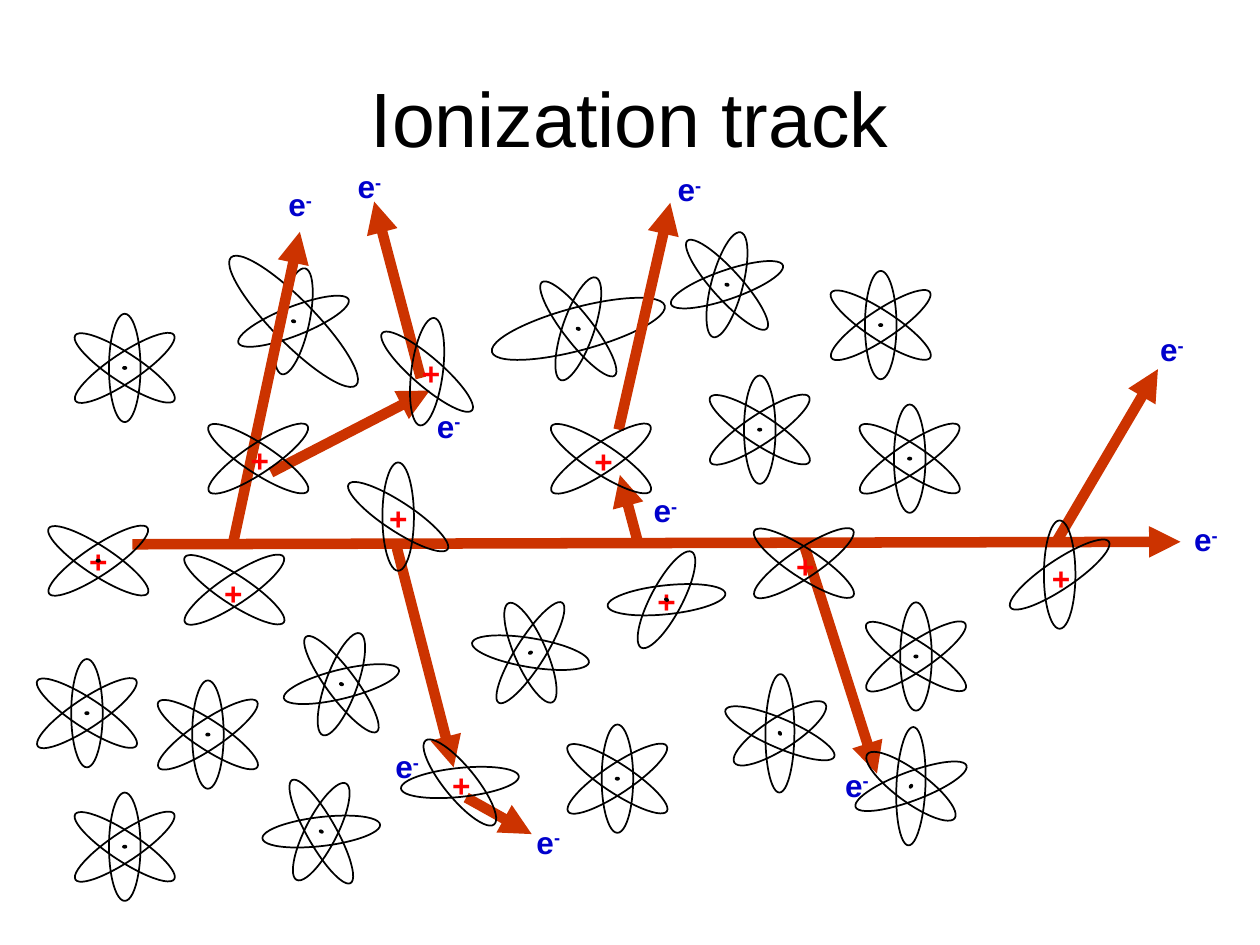
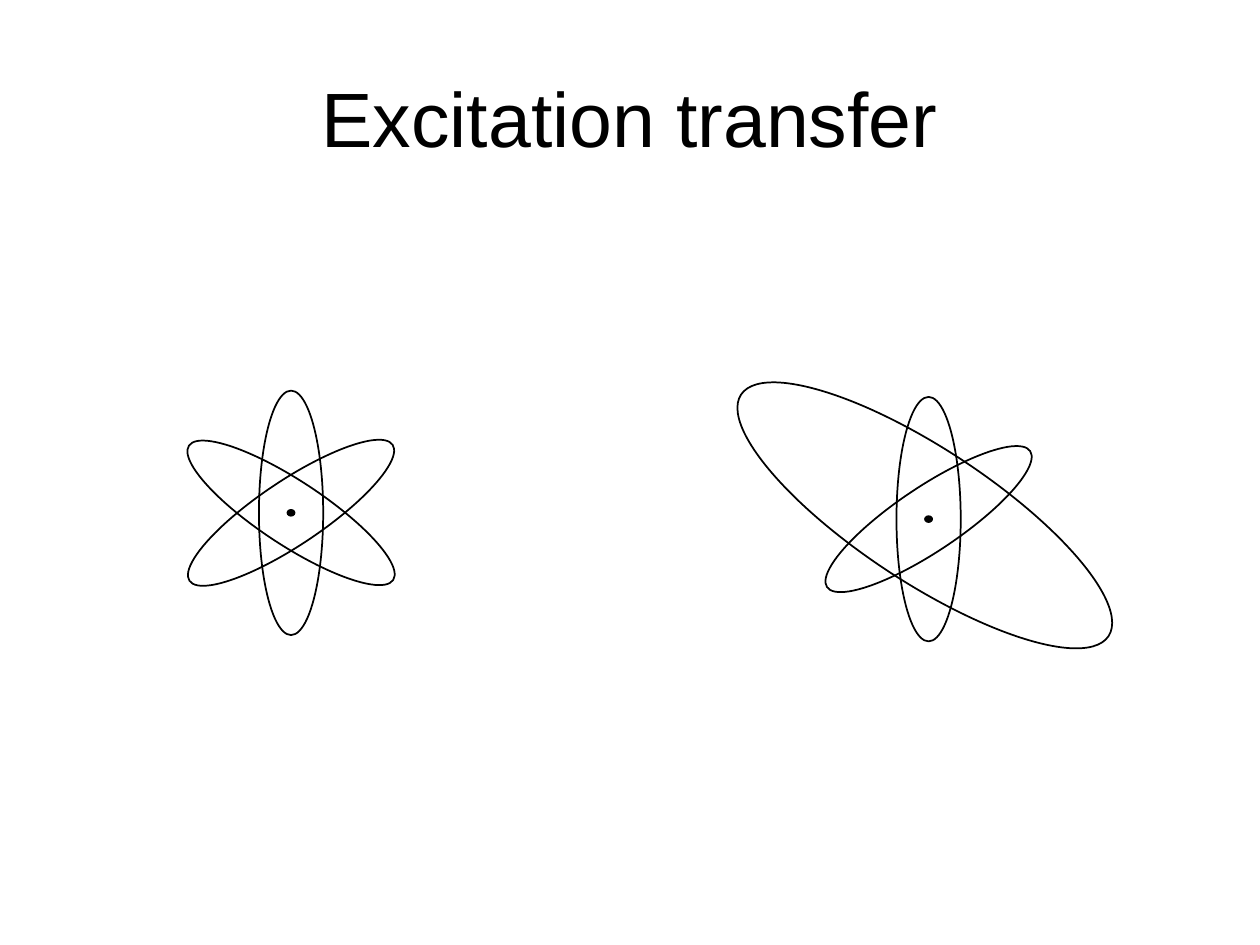
import pptx
import pptx.util
import pptx.dml.color
import pptx.enum.shapes
import pptx.enum.text
from lxml import etree
from pptx.oxml.ns import qn

Inches = pptx.util.Inches
Pt = pptx.util.Pt
RGBColor = pptx.dml.color.RGBColor

BLACK = RGBColor(0x00, 0x00, 0x00)
TRACK_RED = RGBColor(0xCC, 0x33, 0x00)
ELECTRON_BLUE = RGBColor(0x00, 0x00, 0xCC)
CHARGE_RED = RGBColor(0xFF, 0x00, 0x00)
FONT = "Arial"

ORBIT_ANGLES = (270, 213.3, 326.2)
SMALL_ORBITS = ((0.86, 0.25), (0.94, 0.23), (0.94, 0.23))
LARGE_ORBITS = ((1.94, 0.51),) * 3
SMALL_NUCLEUS = (0.02, 0.03)
LARGE_NUCLEUS = (0.05, 0.06)
SWOLLEN_ORBIT = (1.42, 0.34)

ATOMS = [
    (2.71, 5.43, 20), (4.21, 5.18, -23.8), (7.22, 3.64, 0), (7.27, 5.21, 0),
    (6.03, 3.41, 0), (6.19, 5.82, 57.2), (4.9, 6.18, 0), (2.55, 6.6, 27.1),
    (1.65, 5.83, 0), (6.99, 2.58, 0), (5.77, 2.26, 14.7), (0.69, 5.66, 0),
    (0.99, 6.72, 0), (0.99, 2.92, 0),
]
# centre x, centre y, turn, swollen orbit
EXCITED_ATOMS = [(4.59, 2.61, 18.8, 2), (2.33, 2.55, 12.3, 1)]
# centre x, centre y, turn, remaining orbits, plus sign left and top
IONS = [
    (0.78, 4.45, 0, (1, 2), (0.61, 4.25)),
    (4.77, 3.64, 0, (1, 2), (4.62, 3.46)),
    (3.16, 4.1, 0, (0, 1), (2.99, 3.91)),
    (8.41, 4.56, 0, (0, 2), (8.25, 4.39)),
    (2.05, 3.64, 0, (1, 2), (1.89, 3.45)),
    (3.65, 6.21, -39.2, (0, 1), (3.49, 6.03)),
    (3.39, 2.95, 7.4, (0, 1), (3.25, 2.76)),
    (6.38, 4.47, 0, (1, 2), (6.22, 4.29)),
    (1.86, 4.68, 0, (1, 2), (1.68, 4.51)),
    (5.29, 4.76, 27.8, (0, 2), (5.12, 4.57)),
]
ELECTRON_PATHS = [
    ((1.05, 4.32), (9.37, 4.3)), ((3.7, 6.33), (4.22, 6.62)),
    ((8.39, 4.29), (9.19, 2.93)), ((3.15, 4.35), (3.6, 6.09)),
    ((3.34, 3), (2.97, 1.6)), ((2.15, 3.75), (3.41, 3.1)),
    ((1.85, 4.31), (2.38, 1.84)), ((6.38, 4.32), (6.96, 6.14)),
    ((5.07, 4.33), (4.92, 3.77)), ((4.91, 3.41), (5.32, 1.61)),
]
ELECTRON_LABELS = [
    (9.38, 4.08), (2.74, 1.28), (4.16, 6.48), (5.28, 1.3), (6.61, 6.03),
    (9.11, 2.57), (3.04, 5.88), (5.09, 3.85), (2.19, 1.42), (3.37, 3.18),
]


def add_title_slide(prs, title):
    s = prs.slides.add_slide(prs.slide_layouts[6])
    tf = s.shapes.add_textbox(Inches(0.5), Inches(0.3), Inches(9), Inches(1.25)).text_frame
    tf.word_wrap = True
    tf.vertical_anchor = pptx.enum.text.MSO_ANCHOR.MIDDLE
    p = tf.paragraphs[0]
    p.text = title
    p.alignment = pptx.enum.text.PP_ALIGN.CENTER
    p.font.name, p.font.size = FONT, Pt(44)
    p.font.color.rgb = BLACK
    return s


def add_ellipse(parent, cx, cy, size, angle, filled=False):
    w, h = size
    sp = parent.shapes.add_shape(
        pptx.enum.shapes.MSO_SHAPE.OVAL,
        Inches(cx - w / 2), Inches(cy - h / 2), Inches(w), Inches(h))
    sp.rotation = angle % 360
    sp.shadow.inherit = False
    if filled:
        sp.fill.solid()
        sp.fill.fore_color.rgb = BLACK
    else:
        sp.fill.background()
    sp.line.color.rgb = BLACK
    sp.line.width = Pt(0.75 if filled else 1)


def add_atom(s, cx, cy, turn=0, kept=(0, 1, 2), sizes=SMALL_ORBITS, nucleus=SMALL_NUCLEUS):
    group = s.shapes.add_group_shape()
    for i in kept:
        add_ellipse(group, cx, cy, sizes[i], ORBIT_ANGLES[i] + turn)
    if nucleus:
        add_ellipse(group, cx, cy, nucleus, 270 + turn, filled=True)
    return group


def add_excited_atom(s, cx, cy, turn, swollen):
    kept = [i for i in range(3) if i != swollen]
    group = add_atom(s, cx, cy, turn, kept)
    add_ellipse(group, cx, cy, SWOLLEN_ORBIT, ORBIT_ANGLES[swollen] + turn)


def add_label(s, left, top, text, color, superscript=""):
    sp = s.shapes.add_textbox(Inches(left), Inches(top), Inches(0.4), Inches(0.4))
    tf = sp.text_frame
    tf.word_wrap = True
    tf.auto_size = pptx.enum.text.MSO_AUTO_SIZE.SHAPE_TO_FIT_TEXT
    p = tf.paragraphs[0]
    p.font.name, p.font.size, p.font.bold = FONT, Pt(18), True
    p.font.color.rgb = color
    p.add_run().text = text
    if superscript:
        r = p.add_run()
        r.text = superscript
        r._r.get_or_add_rPr().set("baseline", "30000")


def add_arrow(s, start, end):
    line = s.shapes.add_connector(
        pptx.enum.shapes.MSO_CONNECTOR.STRAIGHT, *map(Inches, start + end))
    line.line.color.rgb = TRACK_RED
    line.line.width = Pt(6)
    etree.SubElement(line.line._get_or_add_ln(), qn("a:tailEnd"), type="triangle")
    etree.SubElement(line._element.spPr, qn("a:effectLst"))


def build_ionization_track(prs):
    s = add_title_slide(prs, "Ionization track")
    for atom in ATOMS:
        add_atom(s, *atom)
    for atom in EXCITED_ATOMS:
        add_excited_atom(s, *atom)
    for start, end in ELECTRON_PATHS:
        add_arrow(s, start, end)
    for cx, cy, turn, kept, plus in IONS:
        add_atom(s, cx, cy, turn, kept, nucleus=None)
        add_label(s, *plus, "+", CHARGE_RED)
    for cx, cy, turn in ((0.78, 4.45, 0), (5.29, 4.76, 27.8)):
        add_ellipse(s, cx, cy, SMALL_NUCLEUS, 270 + turn, filled=True)
    add_atom(s, 7.23, 6.24, -53.8)
    for left, top in ELECTRON_LABELS:
        add_label(s, left, top, "e", ELECTRON_BLUE, "-")


def build_excitation_transfer(prs):
    s = add_title_slide(prs, "Excitation transfer")
    add_atom(s, 2.31, 4.07, sizes=LARGE_ORBITS, nucleus=LARGE_NUCLEUS)
    excited = add_atom(s, 7.37, 4.12, kept=(0, 2), sizes=LARGE_ORBITS, nucleus=LARGE_NUCLEUS)
    add_ellipse(excited, 7.34, 4.09, (3.49, 1.06), ORBIT_ANGLES[1])


def main():
    prs = pptx.Presentation()
    prs.slide_width, prs.slide_height = Inches(10), Inches(7.5)
    build_ionization_track(prs)
    build_excitation_transfer(prs)
    prs.save("out.pptx")


if __name__ == "__main__":
    main()
